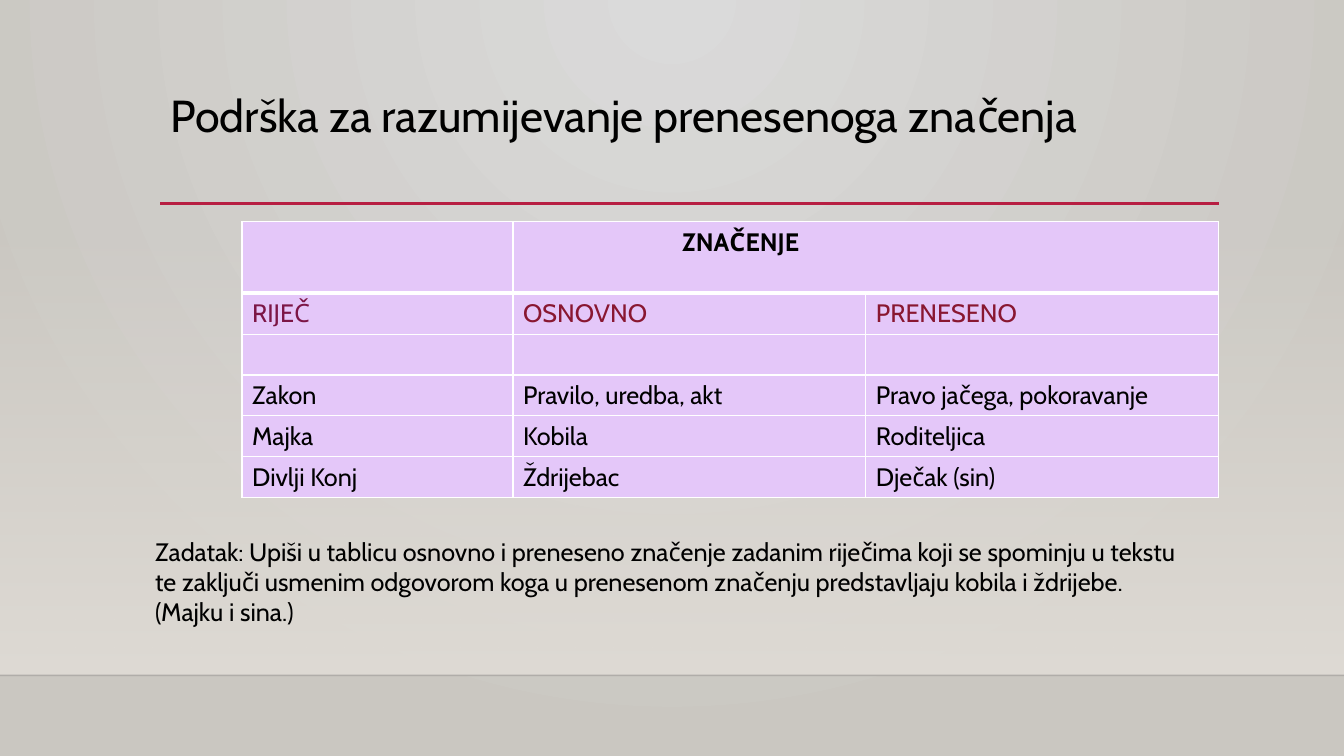
"""Build the slide on word meanings, with its vocabulary table and task."""
from dataclasses import dataclass
from typing import Any, NamedTuple

from lxml import etree
from pptx import Presentation
from pptx import util as u
from pptx.dml import color as dml
from pptx.enum import shapes, text
from pptx.oxml import ns


@dataclass(frozen=True)
class Theme:
    font: str = "Cabin"
    title_size: int = 32
    body_size: int = 18
    ink: str = "000000"
    glow: str = "DADADA"
    wall: str = "CAC7C1"
    haze: str = "DFDBD5"
    floor_edge: str = "000001"
    accent: str = "B71E42"
    cell: str = "E4C7F9"
    grid: str = "FFFFFF"
    word_head: str = "7C1646"
    meaning_head: str = "891731"


class Box(NamedTuple):
    left: float
    top: float
    width: float
    height: float

    def lengths(self) -> list[u.Length]:
        return [u.Cm(side) for side in self]


class Rule(NamedTuple):
    left: float
    right: float
    y: float
    color: str
    points: float
    opacity: int


class Passage(NamedTuple):
    wording: str
    box: Box
    size: int
    spacing: float


class Entry(NamedTuple):
    wording: str
    color: str
    bold: bool = False


THEME = Theme()
SLIDE_WIDTH, SLIDE_HEIGHT = 33.87, 19.05
FLOOR_Y = 17.02

HAZE = Box(0, 5.61, SLIDE_WIDTH, FLOOR_Y - 5.61)
RULES = [
    Rule(0, SLIDE_WIDTH, FLOOR_Y, THEME.floor_edge, 1, 20),
    Rule(4.04, 30.73, 5.13, THEME.accent, 2.5, 100),
]
PASSAGES = [
    Passage("Podrška za razumijevanje prenesenoga značenja",
            Box(4.04, 2.24, 26.67, 2.92), THEME.title_size, 0.9),
    Passage("Zadatak: Upiši u tablicu osnovno i preneseno značenje zadanim "
            "riječima koji se spominju u tekstu te zaključi usmenim odgovorom "
            "koga u prenesenom značenju predstavljaju kobila i ždrijebe. "
            "(Majku i sina.)",
            Box(3.66, 13.39, 26.29, 2.57), THEME.body_size, 1.0),
]

COLUMN_WIDTHS = [6.83, 8.89, 8.89]
ROW_HEIGHTS = [1.8] + [1.03] * 5
TABLE = Box(6.1, 5.59, sum(COLUMN_WIDTHS), sum(ROW_HEIGHTS))
HEADING_INDENT = 4.26
WORDS = [
    ("Zakon", "Pravilo, uredba, akt", "Pravo jačega, pokoravanje"),
    ("Majka", "Kobila", "Roditeljica"),
    ("Divlji Konj", "Ždrijebac", "Dječak (sin)"),
]
BLANK = Entry("", THEME.ink)
ENTRIES = [
    [BLANK, Entry("ZNAČENJE", THEME.ink, True), BLANK],
    [Entry("RIJEČ", THEME.word_head),
     Entry("OSNOVNO", THEME.meaning_head),
     Entry("PRENESENO", THEME.meaning_head)],
    [BLANK] * 3,
    *[[Entry(word, THEME.ink) for word in row] for row in WORDS],
]


def rgb(value: str) -> dml.RGBColor:
    return dml.RGBColor.from_string(value)


def child(parent: Any, tag: str, **attributes: str) -> Any:
    return etree.SubElement(parent, ns.qn(tag), attributes)


def set_all(target: Any, values: dict[str, Any]) -> None:
    for name, value in values.items():
        setattr(target, name, value)


def set_font(font: Any, size: int, color: str, bold: bool = False) -> None:
    set_all(font, {"name": THEME.font, "size": u.Pt(size), "bold": bold})
    font.color.rgb = rgb(color)


def set_opacity(holder: Any, percent: int) -> None:
    tint = next(holder.iter(ns.qn("a:srgbClr")))
    child(tint, "a:alpha", val=str(percent * 1000))


def set_gradient(fill: Any, start: str, end: str) -> None:
    fill.gradient()
    for stop, color, position in zip(fill.gradient_stops, (start, end), (0, 1)):
        stop.color.rgb = rgb(color)
        stop.position = position


def paint_background(slide: Any) -> None:
    set_gradient(slide.background.fill, THEME.glow, THEME.wall)
    gradient = next(slide.element.iter(ns.qn("a:gradFill")))
    gradient.remove(gradient.find(ns.qn("a:lin")))
    circle = child(gradient, "a:path", path="circle")
    child(circle, "a:fillToRect", l="43000", t="0", r="43000", b="100000")


def add_haze(slide: Any) -> None:
    haze = slide.shapes.add_shape(shapes.MSO_SHAPE.RECTANGLE, *HAZE.lengths())
    haze.shadow.inherit = False
    haze.line.fill.background()
    set_gradient(haze.fill, THEME.haze, THEME.haze)
    haze.fill.gradient_angle = 270
    set_opacity(haze.element.spPr, 0)


def add_rule(slide: Any, rule: Rule) -> None:
    ends = [u.Cm(end) for end in (rule.left, rule.y, rule.right, rule.y)]
    line = slide.shapes.add_connector(shapes.MSO_CONNECTOR.STRAIGHT, *ends)
    line.line.color.rgb = rgb(rule.color)
    line.line.width = u.Pt(rule.points)
    properties = line.element.spPr
    if rule.opacity < 100:
        set_opacity(properties, rule.opacity)
    child(properties, "a:effectLst")


def add_passage(slide: Any, passage: Passage) -> None:
    frame = slide.shapes.add_textbox(*passage.box.lengths()).text_frame
    set_all(frame, {"word_wrap": True, "vertical_anchor": text.MSO_ANCHOR.TOP})
    paragraph = frame.paragraphs[0]
    set_all(paragraph, {"text": passage.wording, "line_spacing": passage.spacing})
    set_font(paragraph.font, passage.size, THEME.ink)


def add_borders(cell: Any, top: int, bottom: int) -> None:
    properties = cell._tc.get_or_add_tcPr()
    for side, points in {"L": 1, "R": 1, "T": top, "B": bottom}.items():
        border = child(properties, f"a:ln{side}", w=str(u.Pt(points)))
        child(child(border, "a:solidFill"), "a:srgbClr", val=THEME.grid)


def add_meanings(slide: Any) -> None:
    table = slide.shapes.add_table(
        len(ROW_HEIGHTS), len(COLUMN_WIDTHS), *TABLE.lengths()).table
    set_all(table, {"first_row": False, "horz_banding": False})
    for column, width in zip(table.columns, COLUMN_WIDTHS):
        column.width = u.Cm(width)
    for index, (row, height) in enumerate(zip(table.rows, ROW_HEIGHTS)):
        row.height = u.Cm(height)
        for cell, entry in zip(row.cells, ENTRIES[index]):
            add_borders(cell, 3 if index == 1 else 1, 3 if index == 0 else 1)
            cell.fill.solid()
            cell.fill.fore_color.rgb = rgb(THEME.cell)
            cell.text = entry.wording
            set_font(cell.text_frame.paragraphs[0].font,
                     THEME.body_size, entry.color, entry.bold)
    heading = table.cell(0, 1)
    heading.merge(table.cell(0, 2))
    heading.margin_left = u.Cm(HEADING_INDENT)


def main() -> None:
    deck = Presentation()
    set_all(deck, {"slide_width": u.Cm(SLIDE_WIDTH),
                   "slide_height": u.Cm(SLIDE_HEIGHT)})
    slide = deck.slides.add_slide(deck.slide_layouts[6])
    paint_background(slide)
    add_haze(slide)
    for rule in RULES:
        add_rule(slide, rule)
    add_meanings(slide)
    for passage in PASSAGES:
        add_passage(slide, passage)
    deck.save("out.pptx")


if __name__ == "__main__":
    main()
